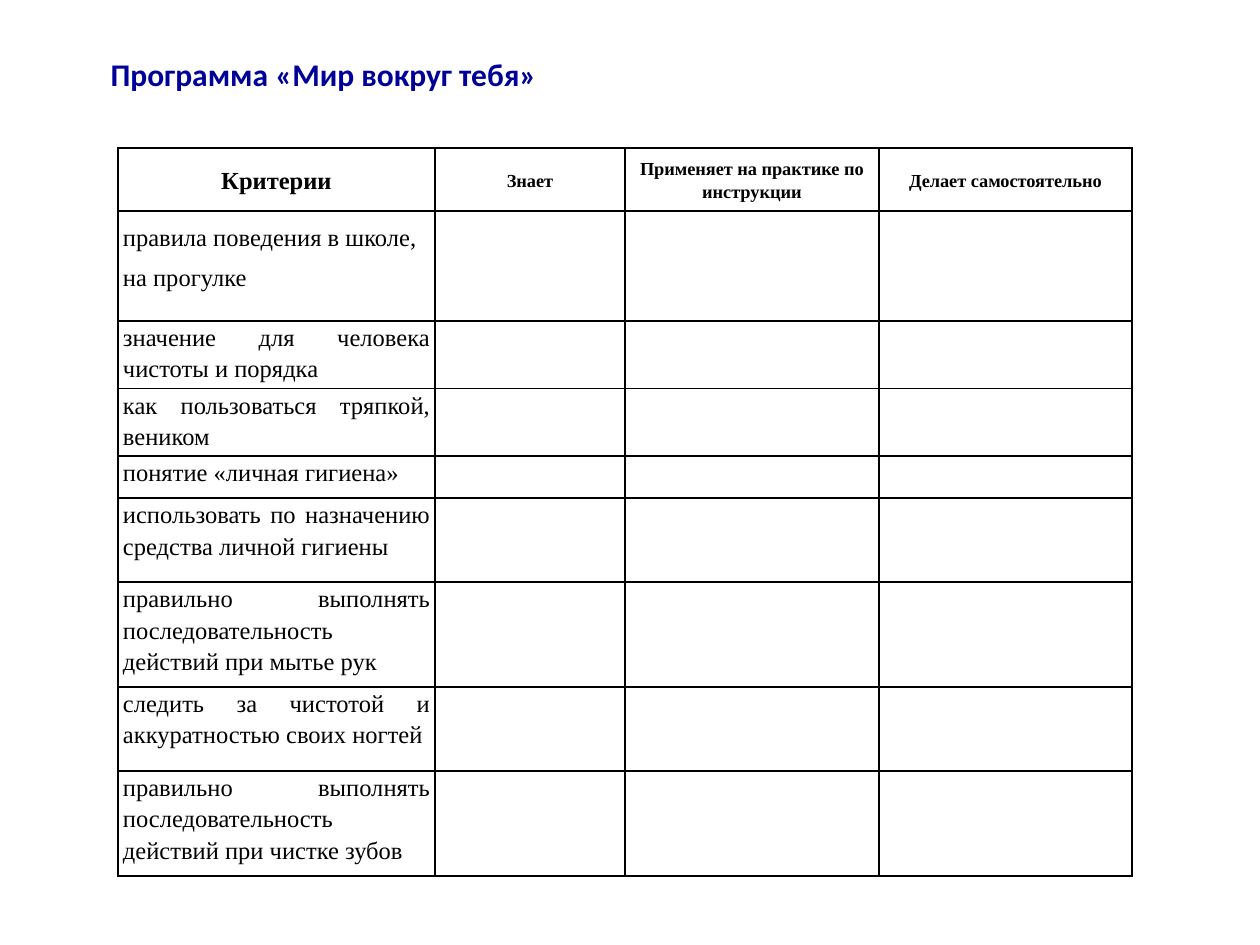
"""Build the slide with the criteria table of a school programme."""
from dataclasses import dataclass

from lxml import etree
from pptx import Presentation
from pptx.dml.color import RGBColor
from pptx.enum.text import MSO_ANCHOR, MSO_AUTO_SIZE, PP_ALIGN
from pptx.oxml.ns import qn
from pptx.slide import Slide
from pptx.table import _Cell
from pptx.util import Pt

PX = 914400 // 126
NAVY = RGBColor(0x00, 0x00, 0x99)
BLACK = RGBColor(0x00, 0x00, 0x00)
LEFT, CENTER, JUSTIFY = PP_ALIGN.LEFT, PP_ALIGN.CENTER, PP_ALIGN.JUSTIFY
TOP, MIDDLE = MSO_ANCHOR.TOP, MSO_ANCHOR.MIDDLE
COL_WIDTHS = (317, 190, 254, 253)
HEADER_HEIGHT = 63
CELL_MARGIN = 5


@dataclass(frozen=True)
class CellStyle:
    size: float = 14
    bold: bool = False
    align: PP_ALIGN = JUSTIFY
    anchor: MSO_ANCHOR = TOP
    spacing: float = 1.15


@dataclass(frozen=True)
class Criterion:
    text: str
    height: int
    style: CellStyle = CellStyle()


MAIN_HEADER = CellStyle(bold=True, align=CENTER, anchor=MIDDLE)
LEVEL_HEADER = CellStyle(size=10.5, bold=True, align=CENTER, anchor=MIDDLE)
LEVELS = ("Знает", "Применяет на практике по инструкции", "Делает самостоятельно")
CRITERIA = (
    Criterion("правила поведения в школе, на прогулке", 110,
              CellStyle(align=LEFT, spacing=1.5)),
    Criterion("значение для человека чистоты и порядка", 63),
    Criterion("как пользоваться тряпкой, веником", 53),
    Criterion("понятие «личная гигиена»", 42),
    Criterion("использовать по назначению средства личной гигиены", 84),
    Criterion("правильно выполнять последовательность действий при мытье рук", 105),
    Criterion("следить за чистотой и аккуратностью своих ногтей", 84),
    Criterion("правильно выполнять последовательность действий при чистке зубов", 105),
)


def add_borders(cell: _Cell) -> None:
    tcPr = cell._tc.get_or_add_tcPr()
    for side in ("a:lnL", "a:lnR", "a:lnT", "a:lnB"):
        ln = etree.SubElement(tcPr, qn(side), w=str(Pt(1)))
        fill = etree.SubElement(ln, qn("a:solidFill"))
        etree.SubElement(fill, qn("a:srgbClr"), val=str(BLACK))


def format_cell(cell: _Cell, text: str, style: CellStyle) -> None:
    add_borders(cell)
    cell.fill.background()
    cell.margin_left = cell.margin_right = CELL_MARGIN * PX
    cell.margin_top = cell.margin_bottom = 0
    cell.vertical_anchor = style.anchor
    p = cell.text_frame.paragraphs[0]
    p.text = text
    p.alignment = style.align
    p.line_spacing = style.spacing
    p.font.name = "Times New Roman"
    p.font.size = Pt(style.size)
    p.font.bold = style.bold
    p.font.color.rgb = BLACK


def add_title(s: Slide, text: str) -> None:
    sp = s.shapes.title
    sp.left, sp.top, sp.width, sp.height = (v * PX for v in (98, 49, 1063, 50))
    tf = sp.text_frame
    tf.word_wrap = True
    tf.auto_size = MSO_AUTO_SIZE.SHAPE_TO_FIT_TEXT
    tf.vertical_anchor = TOP
    p = tf.paragraphs[0]
    p.text = text
    p.alignment = LEFT
    p.font.name = "Calibri"
    p.font.size = Pt(18)
    p.font.bold = True
    p.font.color.rgb = NAVY


def add_criteria_table(s: Slide) -> None:
    heights = [HEADER_HEIGHT] + [c.height for c in CRITERIA]
    table = s.shapes.add_table(
        len(heights), len(COL_WIDTHS), 118 * PX, 148 * PX,
        sum(COL_WIDTHS) * PX, sum(heights) * PX).table
    table.first_row = table.horz_banding = False
    for column, width in zip(table.columns, COL_WIDTHS):
        column.width = width * PX
    for row, height in zip(table.rows, heights):
        row.height = height * PX
    format_cell(table.cell(0, 0), "Критерии", MAIN_HEADER)
    for col, level in enumerate(LEVELS, 1):
        format_cell(table.cell(0, col), level, LEVEL_HEADER)
    for row, criterion in enumerate(CRITERIA, 1):
        format_cell(table.cell(row, 0), criterion.text, criterion.style)
        for col in range(1, len(COL_WIDTHS)):
            format_cell(table.cell(row, col), "", CellStyle())


def main() -> None:
    prs = Presentation()
    prs.slide_width, prs.slide_height = 1260 * PX, 945 * PX
    s = prs.slides.add_slide(prs.slide_layouts[5])
    add_criteria_table(s)
    add_title(s, "Программа «Мир вокруг тебя»")
    prs.save("out.pptx")


if __name__ == "__main__":
    main()
